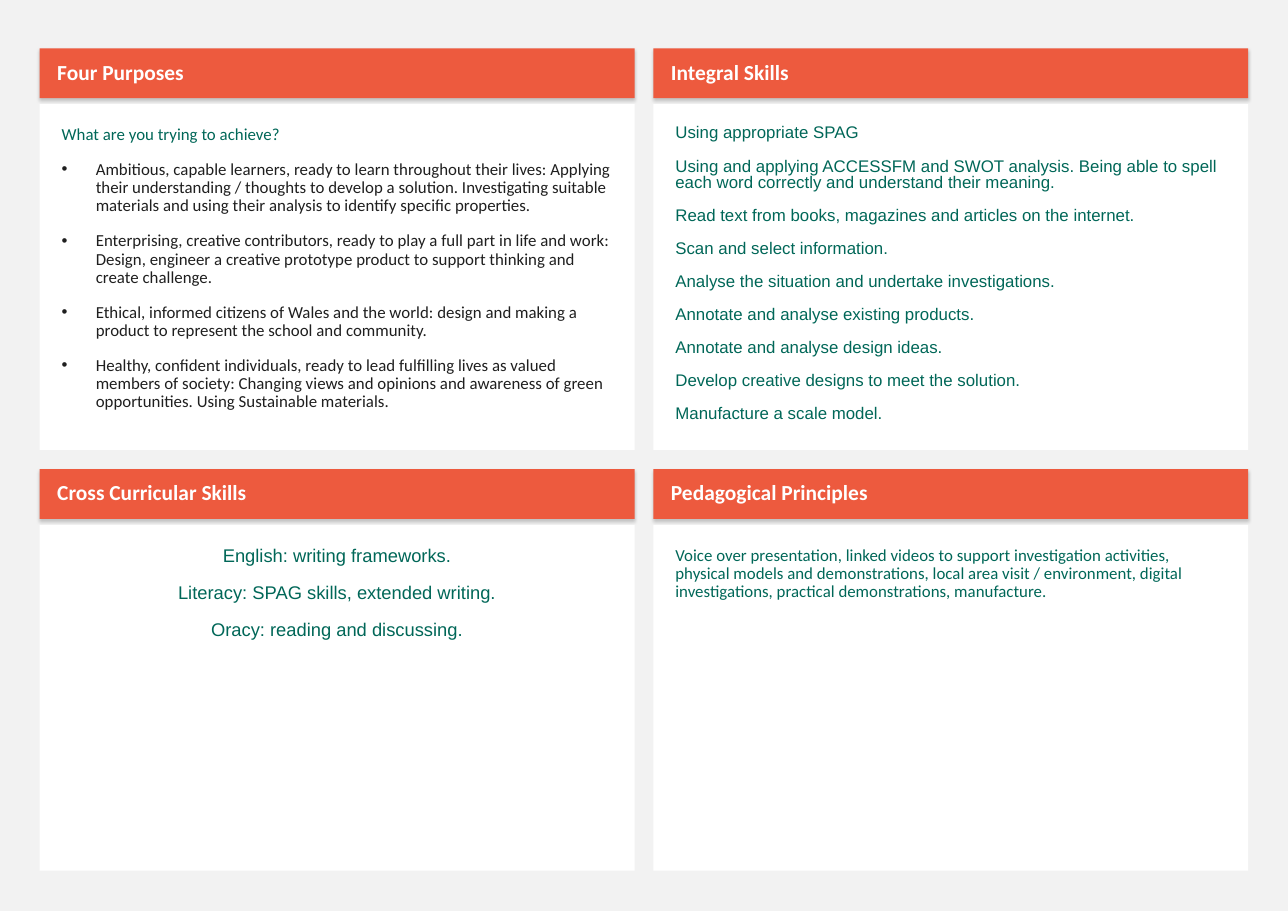
"""Build a lesson planning page with four headed panels."""
from lxml.etree import SubElement
from pptx import Presentation
from pptx.dml.color import RGBColor
from pptx.enum.shapes import MSO_SHAPE as Shape
from pptx.enum.text import MSO_ANCHOR as Anchor, PP_ALIGN as Align
from pptx.oxml.ns import qn
from pptx.util import Inches, Pt

PAGE_GREY = RGBColor(0xF2, 0xF2, 0xF2)
ORANGE = RGBColor(0xED, 0x5A, 0x3E)
WHITE = RGBColor(0xFF, 0xFF, 0xFF)
GREEN = RGBColor(0x00, 0x67, 0x58)
BLACK = RGBColor(0x1F, 0x1F, 0x1F)

LEFT, TOP = 0.36, 0.44
COLUMN_STEP, ROW_STEP = 5.57, 3.82
WIDTH, HEADING_HEIGHT, BODY_HEIGHT = 5.4, 0.45, 3.14
BODY_OFFSET = 0.505
BULLET_INDENT = 0.31

HEADING_FRAME = {
    "vertical_anchor": Anchor.MIDDLE,
    "margin_left": Inches(0.16), "margin_right": Inches(0.1),
    "margin_top": Inches(0.05), "margin_bottom": Inches(0.05),
}
BODY_FRAME = {
    "vertical_anchor": Anchor.TOP,
    "margin_left": Inches(0.2), "margin_right": Inches(0.2),
    "margin_top": Inches(0.2), "margin_bottom": Inches(0.2),
}
PARA = {"alignment": Align.LEFT, "line_spacing": 0.9, "space_before": Pt(11)}
CENTRED = PARA | {"alignment": Align.CENTER}
TIGHT = PARA | {"line_spacing": 0.8}

HEADING_FONT = {"name": "Calibri", "size": Pt(14), "bold": True}
CALIBRI = {"name": "Calibri", "size": Pt(11)}
ARIAL = {"name": "Arial", "size": Pt(11)}
LARGE_ARIAL = {"name": "Arial", "size": Pt(12)}

PURPOSES = [
    "Ambitious, capable learners, ready to learn throughout their lives: Applying "
    "their understanding / thoughts to develop a solution. Investigating suitable "
    "materials and using their analysis to identify specific properties.",
    "Enterprising, creative contributors, ready to play a full part in life and work: "
    "Design, engineer a creative prototype product to support thinking and "
    "create challenge.",
    "Ethical, informed citizens of Wales and the world: design and making a "
    "product to represent the school and community.",
    "Healthy, confident individuals, ready to lead fulfilling lives as valued "
    "members of society: Changing views and opinions and awareness of green "
    "opportunities. Using Sustainable materials.",
]
INTEGRAL_SKILLS = [
    "Using appropriate SPAG",
    "Using and applying ACCESSFM and SWOT analysis. Being able to spell "
    "each word correctly and understand their meaning.",
    "Read text from books, magazines and articles on the internet.",
    "Scan and select information.",
    "Analyse the situation and undertake investigations.",
    "Annotate and analyse existing products.",
    "Annotate and analyse design ideas.",
    "Develop creative designs to meet the solution.",
    "Manufacture a scale model.",
]
CROSS_SKILLS = [
    "English: writing frameworks.",
    "Literacy: SPAG skills, extended writing.",
    "Oracy: reading and discussing.",
]
PRINCIPLES = [
    "Voice over presentation, linked videos to support investigation activities, "
    "physical models and demonstrations, local area visit / environment, digital "
    "investigations, practical demonstrations, manufacture.",
]


def set_values(target, values):
    """Set each named attribute of the target."""
    for name, value in values.items():
        setattr(target, name, value)


def add_box(page, left, top, height, fill, frame_values):
    """Add a plain filled rectangle ready for text."""
    box = page.shapes.add_shape(
        Shape.RECTANGLE, Inches(left), Inches(top), Inches(WIDTH), Inches(height))
    box.shadow.inherit = False
    box.fill.solid()
    box.fill.fore_color.rgb = fill
    box.line.fill.background()
    box.text_frame.word_wrap = True
    set_values(box.text_frame, frame_values)
    return box


def add_soft_shadow(box):
    """Give the box a faint shadow below its lower edge."""
    effects = box.element.spPr.find(qn("a:effectLst"))
    shadow = SubElement(effects, qn("a:outerShdw"), blurRad="25400",
                        dist="19050", dir="5400000", rotWithShape="0")
    colour = SubElement(shadow, qn("a:srgbClr"), val="000000")
    SubElement(colour, qn("a:alpha"), val="20000")


def add_bullet(para):
    """Give the paragraph a hanging round bullet."""
    indent = Inches(BULLET_INDENT)
    properties = para._p.get_or_add_pPr()
    properties.set("marL", str(indent))
    properties.set("indent", str(-indent))
    SubElement(properties, qn("a:buFont"), typeface="Arial")
    SubElement(properties, qn("a:buChar"), char="•")


def write_paras(box, texts, para_values, font_values, colour):
    """Write one paragraph per text and return them."""
    frame = box.text_frame
    paras = [frame.paragraphs[0]] + [frame.add_paragraph() for _ in texts[1:]]
    for para, text in zip(paras, texts):
        set_values(para, para_values)
        span = para.add_run()
        span.text = text
        set_values(span.font, font_values)
        span.font.color.rgb = colour
    return paras


def add_panel(page, column, row, title, texts, para_values, font_values):
    """Add a heading bar with its body and return the body paragraphs."""
    left = LEFT + column * COLUMN_STEP
    top = TOP + row * ROW_STEP
    body = add_box(page, left, top + BODY_OFFSET, BODY_HEIGHT, WHITE, BODY_FRAME)
    heading = add_box(page, left, top, HEADING_HEIGHT, ORANGE, HEADING_FRAME)
    add_soft_shadow(heading)
    write_paras(heading, [title], PARA, HEADING_FONT, WHITE)
    return write_paras(body, texts, para_values, font_values, GREEN)


def main():
    """Build the page and save the deck."""
    deck = Presentation()
    deck.slide_width, deck.slide_height = Inches(11.69), Inches(8.27)
    page = deck.slides.add_slide(deck.slide_layouts[6])
    page.background.fill.solid()
    page.background.fill.fore_color.rgb = PAGE_GREY

    purposes = add_panel(page, 0, 0, "Four Purposes",
                         ["What are you trying to achieve?"] + PURPOSES, PARA, CALIBRI)
    for para in purposes[1:]:
        add_bullet(para)
        para.runs[0].font.color.rgb = BLACK
    add_panel(page, 1, 0, "Integral Skills", INTEGRAL_SKILLS, TIGHT, ARIAL)
    add_panel(page, 0, 1, "Cross Curricular Skills", CROSS_SKILLS, CENTRED, LARGE_ARIAL)
    add_panel(page, 1, 1, "Pedagogical Principles", PRINCIPLES, PARA, CALIBRI)
    deck.save("out.pptx")


if __name__ == "__main__":
    main()
